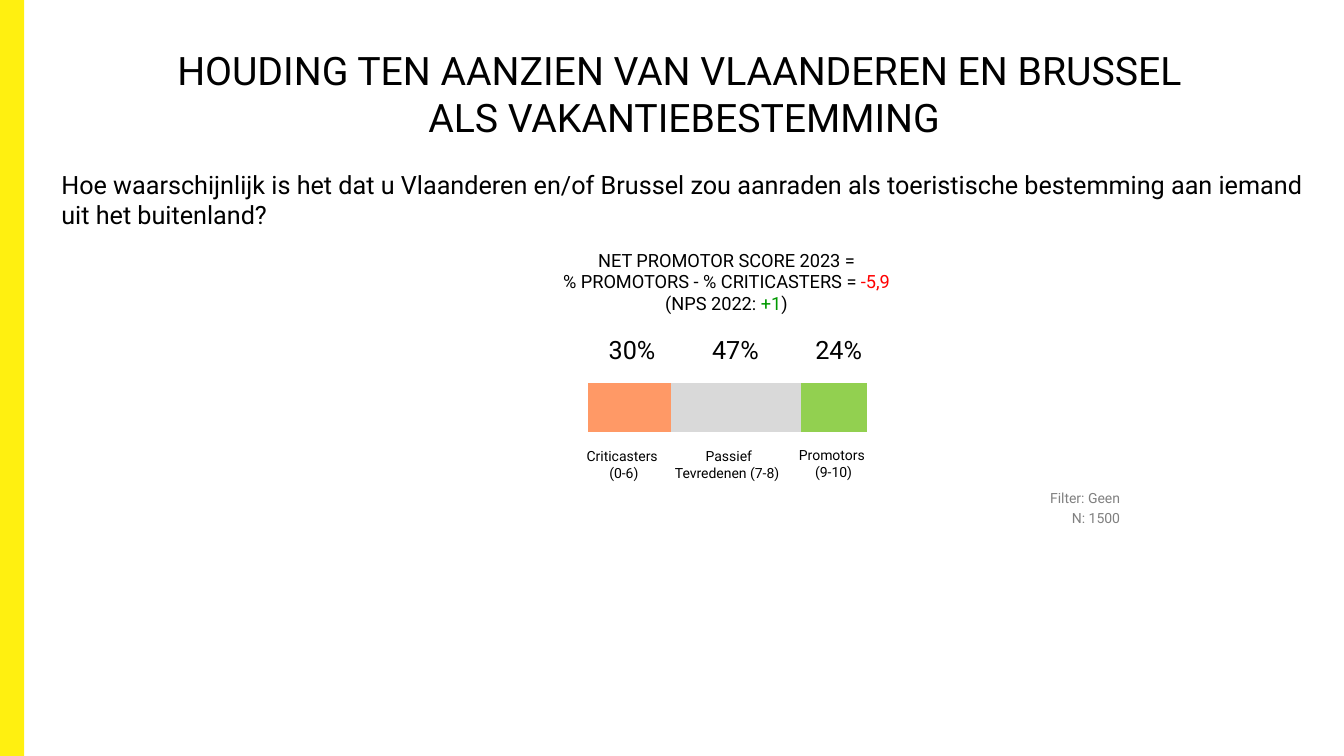
from dataclasses import dataclass
from typing import NamedTuple

from lxml import etree
from pptx import Presentation
from pptx.chart.data import CategoryChartData
from pptx.dml.color import RGBColor
from pptx.enum.chart import XL_CHART_TYPE
from pptx.enum.shapes import MSO_SHAPE
from pptx.enum.text import MSO_ANCHOR, PP_ALIGN
from pptx.oxml.ns import qn
from pptx.util import Pt

STACKED_BAR = XL_CHART_TYPE.BAR_STACKED_100
RECTANGLE = MSO_SHAPE.RECTANGLE
TOP, MIDDLE = MSO_ANCHOR.TOP, MSO_ANCHOR.MIDDLE
LEFT, CENTER, RIGHT = PP_ALIGN.LEFT, PP_ALIGN.CENTER, PP_ALIGN.RIGHT


@dataclass(frozen=True)
class Theme:
    font: str = "Roboto"
    chart_font: str = "Calibri"
    title_size: float = 28
    body_size: float = 18
    score_size: float = 13
    small_size: float = 10
    text: str = "000000"
    muted: str = "808080"
    accent: str = "FFF010"
    negative: str = "FF0000"
    positive: str = "009900"
    critics: str = "FF9966"
    passives: str = "D9D9D9"
    promoters: str = "92D050"


class Box(NamedTuple):
    left: float
    top: float
    width: float
    height: float

    def inside(self, left, top, width, height):
        """Return a box whose position is measured from this box's corner."""
        return Box(self.left + left, self.top + top, width, height)

    def lengths(self):
        return [Pt(value) for value in self]


THEME = Theme()
SLIDE_WIDTH, SLIDE_HEIGHT = 960, 540
BAR_WIDTH = 17.3

# label, share, colour, label offset (left, top) and label width
GROUPS = [
    ("Criticasters \v(0-6)", 30, THEME.critics, (0, 83.5), 74),
    ("Passief Tevredenen (7-8) ", 47, THEME.passives, (62, 83.5), 100),
    ("Promotors \v(9-10)", 24, THEME.promoters, (149.8, 82.8), 74),
]


def add_text(slide, box, paragraphs, size, color=THEME.text, align=LEFT,
             anchor=TOP, gap=0):
    """Add a text box; each paragraph is a list of (text, colour or None) runs."""
    frame = slide.shapes.add_textbox(*box.lengths()).text_frame
    frame.word_wrap = True
    frame.vertical_anchor = anchor
    for index, runs in enumerate(paragraphs):
        paragraph = frame.paragraphs[0] if index == 0 else frame.add_paragraph()
        paragraph.alignment = align
        if index and gap:
            paragraph.space_before = Pt(gap)
        for text, run_color in runs:
            for line_index, line in enumerate(text.split("\v")):
                if line_index:
                    paragraph.add_line_break()
                run = paragraph.add_run()
                run.text = line
                run.font.name = THEME.font
                run.font.size = Pt(size)
                run.font.color.rgb = RGBColor.from_string(run_color or color)


def add_side_band(slide, box):
    band = slide.shapes.add_shape(RECTANGLE, *box.lengths())
    band.shadow.inherit = False
    band.fill.solid()
    band.fill.fore_color.rgb = RGBColor.from_string(THEME.accent)
    band.line.fill.background()


def add_heading(slide, box):
    """Add the title and, below it, the survey question."""
    title = "HOUDING TEN AANZIEN VAN VLAANDEREN EN BRUSSEL \vALS VAKANTIEBESTEMMING"
    question = ("Hoe waarschijnlijk is het dat u Vlaanderen en/of Brussel zou aanraden "
                "als toeristische bestemming aan iemand uit het buitenland?")
    add_text(slide, box.inside(0, 0, box.width, 90), [[(title, None)]],
             THEME.title_size, align=CENTER, anchor=MIDDLE)
    add_text(slide, box.inside(19.4, 95.8, 910.8, 51.8), [[(question, None)]],
             THEME.body_size)


def add_score(slide, box):
    add_text(slide, box, [
        [("NET PROMOTOR SCORE 2023 = ", None)],
        [("% PROMOTORS - % CRITICASTERS = ", None), ("-5,9 ", THEME.negative)],
        [("(NPS 2022: ", None), ("+1", THEME.positive), (") ", None)],
    ], THEME.score_size, align=CENTER)


def set_plot_layout(chart, **fractions):
    """Fix the inner plot area as fractions (x, y, w, h) of the chart."""
    plot_area = chart.element.find(".//" + qn("c:plotArea"))
    layout = plot_area.find(qn("c:layout"))
    if layout is None:
        layout = etree.Element(qn("c:layout"))
        plot_area.insert(0, layout)
    manual = etree.SubElement(layout, qn("c:manualLayout"))
    settings = {"layoutTarget": "inner", "xMode": "edge", "yMode": "edge", **fractions}
    for name, value in settings.items():
        etree.SubElement(manual, qn("c:" + name)).set("val", str(value))


def add_share_chart(slide, box):
    data = CategoryChartData()
    data.categories = ["1"]
    for number, (_, share, *_) in enumerate(GROUPS, start=1):
        data.add_series(f"Series {number}", [share])
    chart = slide.shapes.add_chart(STACKED_BAR, *box.lengths(), data).chart
    chart.has_legend = False
    chart.has_title = False
    chart.font.name = THEME.chart_font
    chart.font.size = Pt(THEME.small_size)
    chart.font.color.rgb = RGBColor.from_string(THEME.text)
    chart.value_axis.has_major_gridlines = False
    chart.value_axis.tick_labels.number_format = "0%"
    chart.value_axis.tick_labels.number_format_is_linked = False
    chart.category_axis.visible = False
    chart.value_axis.visible = False
    plot = chart.plots[0]
    plot.gap_width = 150
    plot.overlap = 100
    plot.vary_by_categories = False
    for series, (_, _, color, *_) in zip(plot.series, GROUPS):
        series.format.fill.solid()
        series.format.fill.fore_color.rgb = RGBColor.from_string(color)
    set_plot_layout(chart, x=0.05, y=0.13, w=0.9, h=0.8)


def add_shares(slide, box):
    """Add the stacked bar with a percentage above and a label below each part."""
    add_share_chart(slide, box)
    column = 73.8
    for index, (label, share, _, (left, top), width) in enumerate(GROUPS):
        add_text(slide, box.inside(6 + index * column, 2.4, column, 29),
                 [[(f"{share}%", None)]], THEME.body_size, align=CENTER)
        add_text(slide, box.inside(left, top, width, 31.5),
                 [[(label, None)]], THEME.small_size, align=CENTER)


def add_sample_note(slide, box):
    add_text(slide, box, [[("Filter: Geen", None)], [("N: 1500", None)]],
             THEME.small_size, THEME.muted, RIGHT, gap=2)


def main():
    presentation = Presentation()
    presentation.slide_width = Pt(SLIDE_WIDTH)
    presentation.slide_height = Pt(SLIDE_HEIGHT)
    slide = presentation.slides.add_slide(presentation.slide_layouts[6])
    add_side_band(slide, Box(0, 0, BAR_WIDTH, SLIDE_HEIGHT))
    add_heading(slide, Box(BAR_WIDTH, 21.6, SLIDE_WIDTH - BAR_WIDTH, 148))
    add_sample_note(slide, Box(532.8, 346.3, 274.3, 38.2))
    add_score(slide, Box(303.8, 174.2, 433.4, 54.7))
    add_shares(slide, Box(408.6, 232.9, 222, 109.4))
    presentation.save("out.pptx")


if __name__ == "__main__":
    main()
